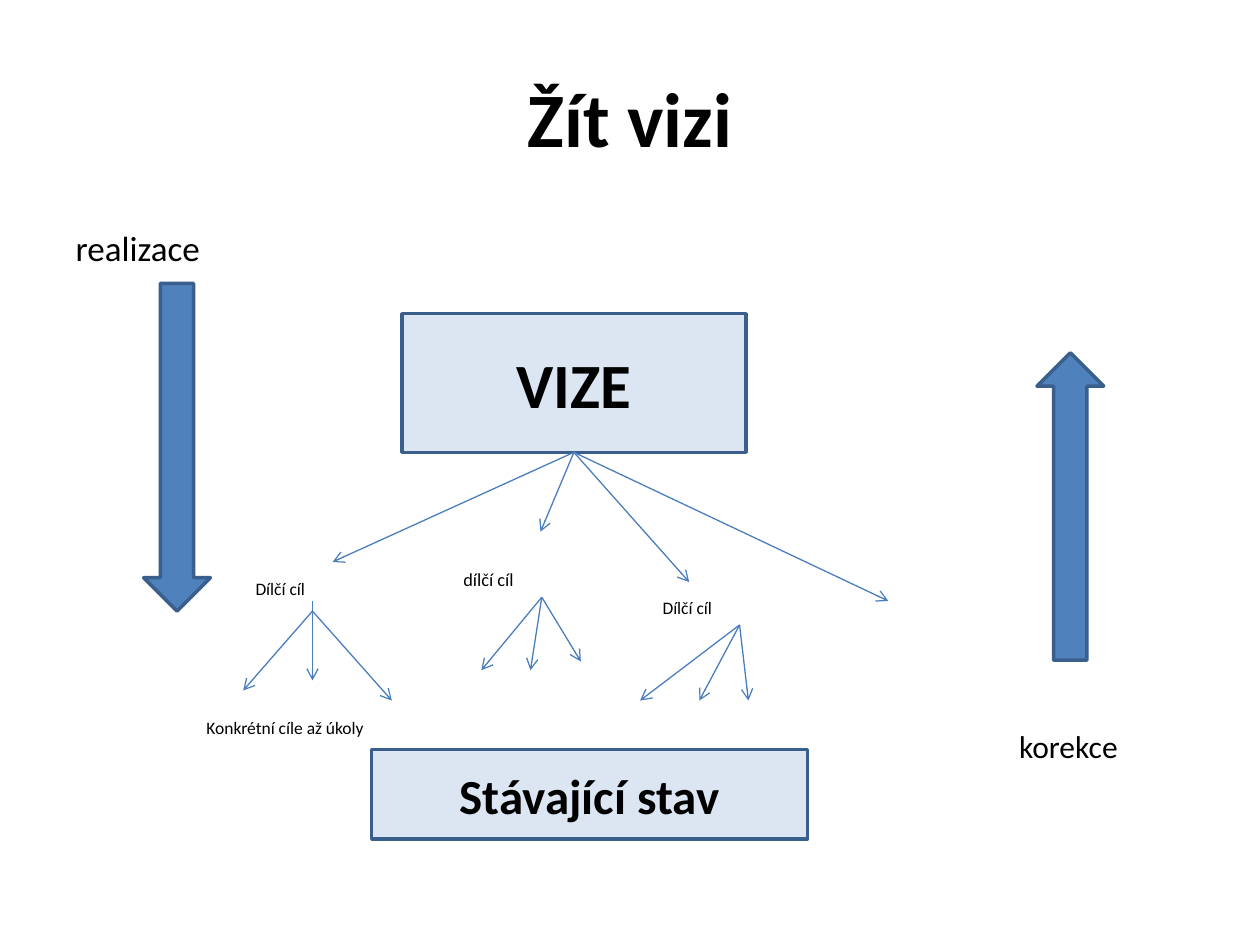
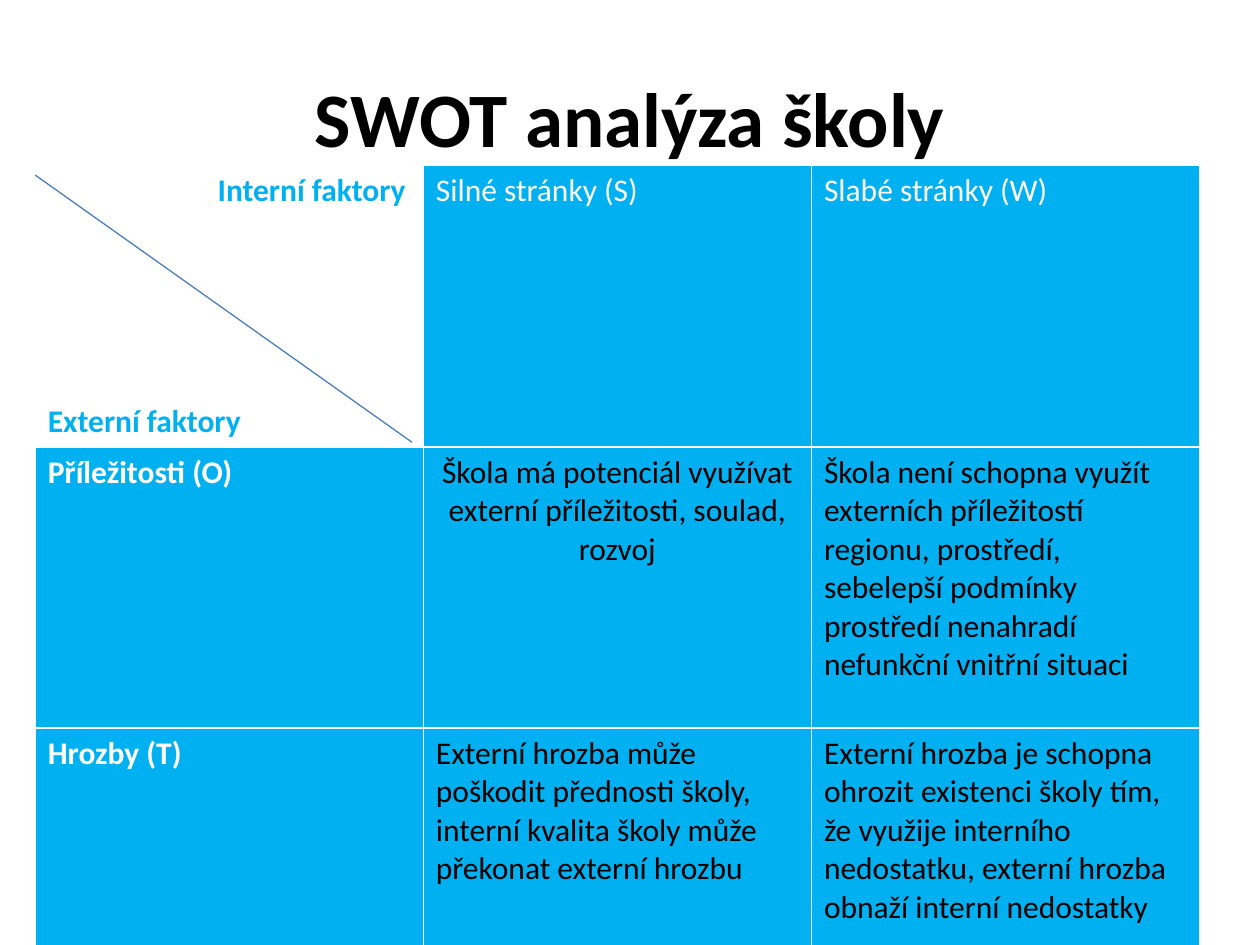
from lxml import etree
from pptx import Presentation
from pptx.dml.color import RGBColor
from pptx.enum.shapes import MSO_CONNECTOR, MSO_SHAPE
from pptx.enum.text import MSO_ANCHOR, PP_ALIGN
from pptx.oxml import parse_xml
from pptx.oxml.ns import nsdecls, qn
from pptx.util import Inches, Pt

# Shared style
FONT = "Calibri"
BLACK = RGBColor(0x00, 0x00, 0x00)
WHITE = RGBColor(0xFF, 0xFF, 0xFF)
PALE_BLUE = RGBColor(0xDC, 0xE6, 0xF2)
MID_BLUE = RGBColor(0x4F, 0x81, 0xBD)
EDGE_BLUE = RGBColor(0x3A, 0x5F, 0x8C)
LINE_BLUE = RGBColor(0x4B, 0x7E, 0xBC)
CYAN = RGBColor(0x00, 0xB0, 0xF0)
TITLE_BOX = (0.5, 0.3, 9, 1.25)


def place(shape, box):
    shape.left, shape.top, shape.width, shape.height = map(Inches, box)


def write(paragraph, text, size, color=BLACK, bold=False, align=PP_ALIGN.LEFT):
    paragraph.text = text
    paragraph.alignment = align
    for run in paragraph.runs:
        font = run.font
        font.name, font.size, font.bold = FONT, Pt(size), bold
        font.color.rgb = color


def add_titled_slide(prs, layout, text):
    slide = prs.slides.add_slide(prs.slide_layouts[layout])
    title = slide.shapes.title
    place(title, TITLE_BOX)
    title.text_frame.vertical_anchor = MSO_ANCHOR.MIDDLE
    write(title.text_frame.paragraphs[0], text, 44, bold=True, align=PP_ALIGN.CENTER)
    return slide


def add_block(slide, preset, box, fill):
    block = slide.shapes.add_shape(preset, *map(Inches, box))
    block.shadow.inherit = False
    block.fill.solid()
    block.fill.fore_color.rgb = fill
    block.line.color.rgb = EDGE_BLUE
    block.line.width = Pt(2)
    return block


def add_state(slide, box, text, size):
    state = add_block(slide, MSO_SHAPE.RECTANGLE, box, PALE_BLUE)
    state.text_frame.vertical_anchor = MSO_ANCHOR.MIDDLE
    write(state.text_frame.paragraphs[0], text, size, bold=True, align=PP_ALIGN.CENTER)


def add_label(slide, box, text, size):
    label = slide.shapes.add_textbox(*map(Inches, box))
    label.text_frame.word_wrap = True
    write(label.text_frame.paragraphs[0], text, size)


def add_line(slide, start, end, arrow=False):
    line = slide.shapes.add_connector(
        MSO_CONNECTOR.STRAIGHT, *map(Inches, (*start, *end)))
    line.line.color.rgb = LINE_BLUE
    line.line.width = Pt(0.75)
    if arrow:
        etree.SubElement(line.line._get_or_add_ln(), qn("a:tailEnd"), type="arrow")
    etree.SubElement(line._element.spPr, qn("a:effectLst"))


def add_fan(slide, origin, tips):
    """Arrows spreading from one point to several tips."""
    for tip in tips:
        add_line(slide, origin, tip, arrow=True)


# Slide 1: from the vision down to the present state
def add_realization(slide, box):
    body = slide.placeholders[1]
    place(body, box)
    heading = body.text_frame.paragraphs[0]
    write(heading, "realizace", 20)
    heading.space_before = Pt(4)
    properties = heading._p.get_or_add_pPr()
    properties.set("marL", str(Inches(0.38)))
    properties.set("indent", str(-Inches(0.38)))
    etree.SubElement(properties, qn("a:buNone"))
    left, top = box[:2]
    add_block(slide, MSO_SHAPE.DOWN_ARROW, (left + 0.64, top + 0.5, 0.53, 2.6), MID_BLUE)


def add_correction(slide, box):
    left, top, width, height = box
    add_block(slide, MSO_SHAPE.UP_ARROW, (left + 0.24, top, 0.53, 2.44), MID_BLUE)
    add_label(slide, (left, top + height - 0.4, width, 0.4), "korekce", 18)


def add_goal_tree(slide, box):
    left, top, width, height = box
    vision = (left, top, width, height)
    add_state(slide, vision, "VIZE", 36)
    root = (left + width / 2, top + height)
    add_fan(slide, root, [(5.47, 4.62), (7.05, 4.77), (4.29, 4.22), (2.64, 4.46)])

    # Partial goals: label, its box and size, fan origin, tips
    goals = [
        ("Dílčí cíl", (1.93, 4.54, 1.37, 0.27), 10, (2.48, 4.85),
         [(3.11, 5.56), (1.93, 5.48)]),
        ("dílčí cíl", (3.58, 4.46, 1.44, 0.28), 10.5, (4.3, 4.74),
         [(4.21, 5.32), (4.61, 5.25), (3.82, 5.32)]),
        ("Dílčí cíl", (5.16, 4.69, 1.42, 0.27), 10, (5.87, 4.96),
         [(5.94, 5.56), (5.08, 5.56), (5.55, 5.56)]),
    ]
    for text, label_box, size, origin, tips in goals:
        add_label(slide, label_box, text, size)
        add_fan(slide, origin, tips)
    add_fan(slide, (2.48, 4.77), [(2.48, 5.4)])

    # Tasks and the starting point
    add_label(slide, (1.54, 5.64, 3.03, 0.27), "Konkrétní cíle až úkoly", 10)
    add_state(slide, (2.95, 5.95, 3.46, 0.71), "Stávající stav", 28)


def build_vision_slide(prs):
    slide = add_titled_slide(prs, 1, "Žít vizi")
    add_realization(slide, (0.5, 1.75, 9, 4.95))
    add_goal_tree(slide, (3.19, 2.49, 2.73, 1.1))
    add_correction(slide, (7.99, 2.8, 1.46, 3.32))


# Slide 2: SWOT matrix
SWOT = [
    ["", "Silné stránky (S)", "Slabé stránky (W)"],
    ["Příležitosti (O)",
     "Škola má potenciál využívat externí příležitosti, soulad, rozvoj",
     "Škola není schopna využít externích příležitostí regionu, prostředí, "
     "sebelepší podmínky prostředí nenahradí nefunkční vnitřní situaci"],
    ["Hrozby (T)",
     "Externí hrozba může poškodit přednosti školy, interní kvalita školy "
     "může překonat externí hrozbu",
     "Externí hrozba je schopna ohrozit existenci školy tím, že využije "
     "interního nedostatku, externí hrozba obnaží interní nedostatky"],
]
ROW_HEIGHTS = (2.23, 2.23, 1.91)


def add_borders(cell):
    properties = cell._tc.get_or_add_tcPr()
    for index, side in enumerate(("lnL", "lnR", "lnT", "lnB")):
        properties.insert(index, parse_xml(
            f'<a:{side} {nsdecls("a")} w="{Pt(1)}"><a:solidFill>'
            f'<a:srgbClr val="{WHITE}"/></a:solidFill></a:{side}>'))


def fill_corner(cell):
    cell.fill.background()
    cell.margin_right = Inches(0.14)
    internal = cell.text_frame.paragraphs[0]
    external = cell.text_frame.add_paragraph()
    write(internal, "Interní faktory", 18, CYAN, True, PP_ALIGN.RIGHT)
    write(external, "Externí faktory", 18, CYAN, True)
    external.space_before = Pt(110)


def add_swot_table(slide, box):
    left, top, width, _ = box
    table = slide.shapes.add_table(3, 3, *map(Inches, box)).table
    for column in table.columns:
        column.width = Inches(width / 3)
    for row, height in zip(table.rows, ROW_HEIGHTS):
        row.height = Inches(height)
    for r, texts in enumerate(SWOT):
        for c, text in enumerate(texts):
            cell = table.cell(r, c)
            add_borders(cell)
            if r == c == 0:
                fill_corner(cell)
                continue
            cell.fill.solid()
            cell.fill.fore_color.rgb = CYAN
            write(cell.text_frame.paragraphs[0], text, 18,
                  BLACK if r and c else WHITE, bold=c == 0,
                  align=PP_ALIGN.CENTER if r == c == 1 else PP_ALIGN.LEFT)
    # Diagonal of the corner cell
    add_line(slide, (left, top + 0.08), (left + 2.99, top + 2.2))


def build_swot_slide(prs):
    slide = add_titled_slide(prs, 5, "SWOT analýza školy")
    add_swot_table(slide, (0.28, 1.31, 9.24, sum(ROW_HEIGHTS)))


def main():
    prs = Presentation()
    prs.slide_width, prs.slide_height = Inches(10), Inches(7.5)
    build_vision_slide(prs)
    build_swot_slide(prs)
    prs.save("out.pptx")


if __name__ == "__main__":
    main()
